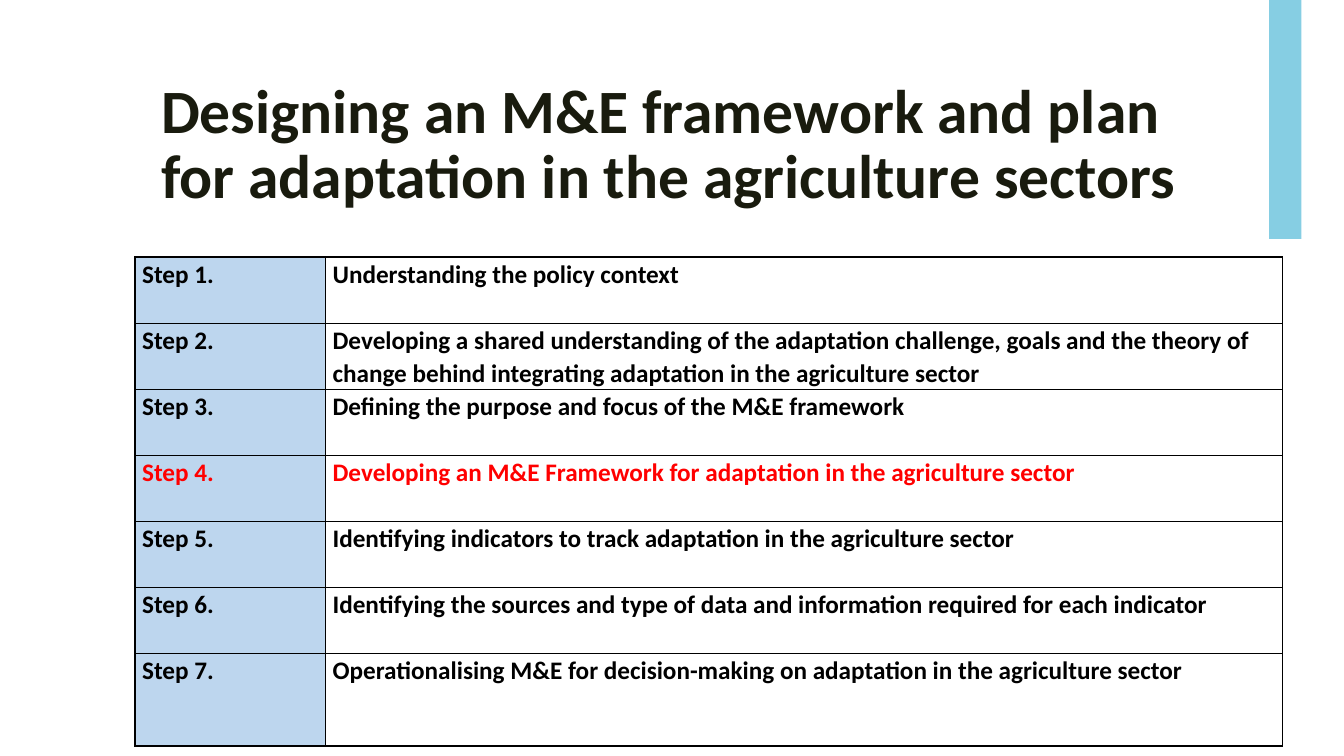
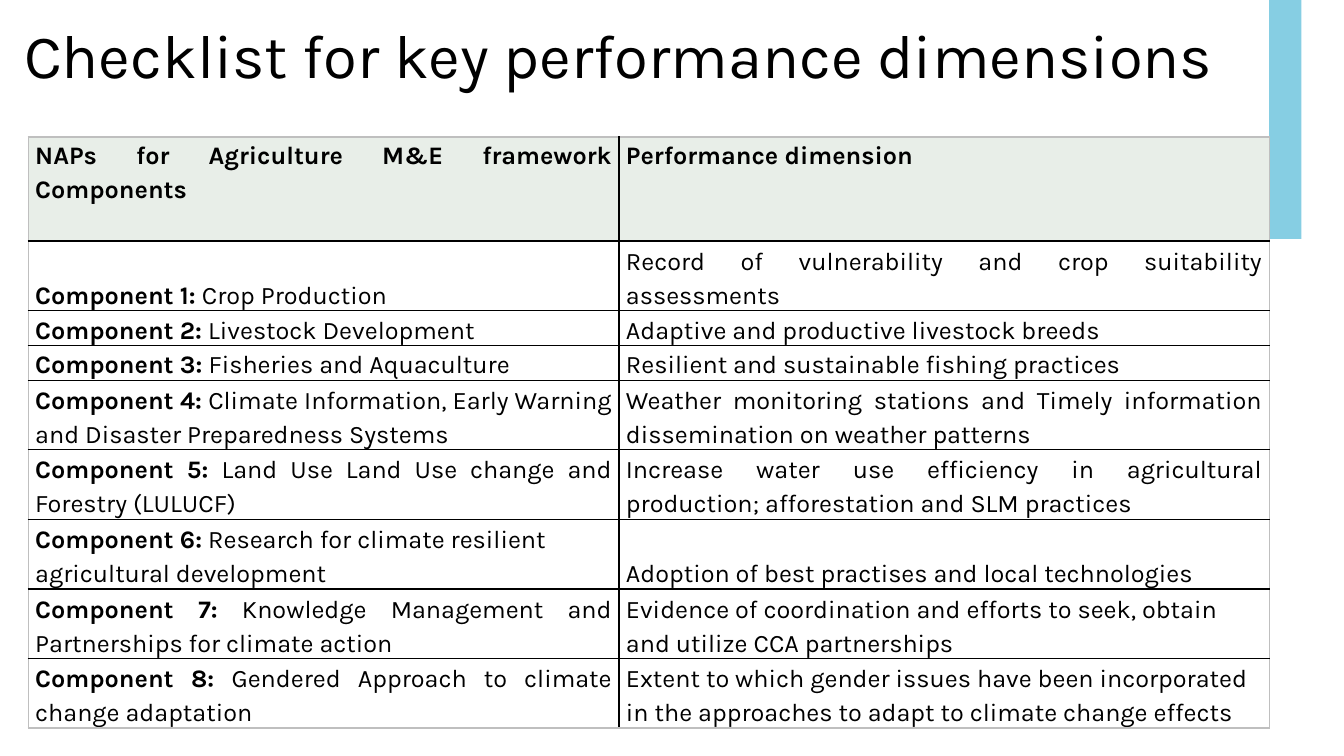
from collections import namedtuple

from lxml import etree
from pptx import Presentation
from pptx.dml.color import RGBColor
from pptx.enum.shapes import MSO_SHAPE
from pptx.enum.text import MSO_ANCHOR, PP_ALIGN
from pptx.oxml.ns import qn
from pptx.util import Inches, Pt

RECTANGLE = MSO_SHAPE.RECTANGLE
TOP, BOTTOM = MSO_ANCHOR.TOP, MSO_ANCHOR.BOTTOM
LEFT, JUSTIFY = PP_ALIGN.LEFT, PP_ALIGN.JUSTIFY

SLIDE_WIDTH, SLIDE_HEIGHT = Inches(13.33), Inches(7.5)
COLORS = {
    "band": "86CEE3",
    "title": "191B0E",
    "text": "000000",
    "highlight": "FF0000",
    "step": "BDD6EE",
    "header": "E8EEE8",
    "cell": "FFFFFF",
    "line": "000000",
    "frame": "BFBFBF",
}
TITLE_SIZE, BODY_SIZE = 44, 18
STEP_FONT, CHECKLIST_FONT = "Calibri", "Karla"

Box = namedtuple("Box", "left top width height")
BAND_BOX = Box(94.43, 0, 2.4, 31.6)

STEPS = [
    "Understanding the policy context",
    "Developing a shared understanding of the adaptation challenge, goals and "
    "the theory of change behind integrating adaptation in the agriculture sector",
    "Defining the purpose and focus of the M&E framework",
    "Developing an M&E Framework for adaptation in the agriculture sector",
    "Identifying indicators to track adaptation in the agriculture sector",
    "Identifying the sources and type of data and information required for each indicator",
    "Operationalising M&E for decision-making on adaptation in the agriculture sector",
]
CURRENT_STEP = 4

CHECKLIST_HEADERS = ["NAPs for Agriculture M&E framework Components", "Performance dimension"]
CHECKLIST = [
    ("Crop Production", JUSTIFY,
     "Record of vulnerability and crop suitability assessments", JUSTIFY),
    ("Livestock Development", JUSTIFY,
     "Adaptive and productive livestock breeds", LEFT),
    ("Fisheries and Aquaculture", JUSTIFY,
     "Resilient and sustainable fishing practices", LEFT),
    ("Climate Information, Early Warning and Disaster Preparedness Systems", JUSTIFY,
     "Weather monitoring stations and Timely information dissemination on weather patterns",
     JUSTIFY),
    ("Land Use Land Use change and Forestry (LULUCF)", JUSTIFY,
     "Increase water use efficiency in agricultural production; afforestation and SLM practices",
     JUSTIFY),
    ("Research for climate resilient agricultural development", LEFT,
     "Adoption of best practises and local technologies", JUSTIFY),
    ("Knowledge Management and Partnerships for climate action", JUSTIFY,
     "Evidence of coordination and efforts to seek, obtain and utilize CCA partnerships", LEFT),
    ("Gendered Approach to climate change adaptation", JUSTIFY,
     "Extent to which gender issues have been incorporated in the approaches "
     "to adapt to climate change effects", LEFT),
]


def color(name):
    return RGBColor.from_string(COLORS[name])


def place(box):
    return (
        round(SLIDE_WIDTH * box.left / 100),
        round(SLIDE_HEIGHT * box.top / 100),
        round(SLIDE_WIDTH * box.width / 100),
        round(SLIDE_HEIGHT * box.height / 100),
    )


def add_run(paragraph, text, font_name, size, color_name="text", bold=False):
    run = paragraph.add_run()
    run.text = text
    run.font.name = font_name
    run.font.size = Pt(size)
    run.font.bold = bold
    run.font.color.rgb = color(color_name)


def add_band(slide, box):
    shape = slide.shapes.add_shape(RECTANGLE, *place(box))
    shape.shadow.inherit = False
    shape.fill.solid()
    shape.fill.fore_color.rgb = color("band")
    shape.line.fill.background()


def add_title(slide, box, text, font_name, color_name="text", bold=False):
    frame = slide.shapes.add_textbox(*place(box)).text_frame
    frame.word_wrap = True
    frame.vertical_anchor = TOP
    paragraph = frame.paragraphs[0]
    paragraph.line_spacing = 0.89
    add_run(paragraph, text, font_name, TITLE_SIZE, color_name, bold)


def add_titled_slide(presentation, box, text, font_name, color_name="text", bold=False):
    slide = presentation.slides.add_slide(presentation.slide_layouts[6])
    add_band(slide, BAND_BOX)
    add_title(slide, box, text, font_name, color_name, bold)
    return slide


def add_grid(slide, box, column_shares, row_shares):
    left, top, width, height = place(box)
    table = slide.shapes.add_table(
        len(row_shares), len(column_shares), left, top, width, height
    ).table
    table.first_row = False
    table.horz_banding = False
    for column, share in zip(table.columns, column_shares):
        column.width = round(width * share / sum(column_shares))
    for row, share in zip(table.rows, row_shares):
        row.height = round(height * share / sum(row_shares))
    return table


def set_borders(table, frame_color):
    last_row, last_column = len(table.rows) - 1, len(table.columns) - 1
    for row in range(last_row + 1):
        for column in range(last_column + 1):
            properties = table.cell(row, column)._tc.get_or_add_tcPr()
            on_frame = {
                "a:lnL": column == 0,
                "a:lnR": column == last_column,
                "a:lnT": row == 0,
                "a:lnB": row == last_row,
            }
            for tag, outer in on_frame.items():
                line = etree.SubElement(properties, qn(tag), w=str(Pt(1)))
                fill = etree.SubElement(line, qn("a:solidFill"))
                name = frame_color if outer else "line"
                etree.SubElement(fill, qn("a:srgbClr"), val=COLORS[name])


def fill_cell(cell, runs, font_name, spacing, fill="cell", color_name="text",
              align=LEFT, anchor=TOP):
    cell.margin_left = cell.margin_right = Inches(0.07)
    cell.margin_top = cell.margin_bottom = 0
    cell.vertical_anchor = anchor
    cell.fill.solid()
    cell.fill.fore_color.rgb = color(fill)
    paragraph = cell.text_frame.paragraphs[0]
    paragraph.alignment = align
    paragraph.line_spacing = spacing
    for text, bold in runs:
        add_run(paragraph, text, font_name, BODY_SIZE, color_name, bold)


def add_steps_table(slide, box):
    table = add_grid(slide, box, [1.89, 9.49], [5] * 6 + [7])
    set_borders(table, "line")
    for number, step in enumerate(STEPS, start=1):
        color_name = "highlight" if number == CURRENT_STEP else "text"
        for column, (text, fill) in enumerate([(f"Step {number}.", "step"), (step, "cell")]):
            fill_cell(table.cell(number - 1, column), [(text, True)], STEP_FONT, 1.07,
                      fill, color_name)


def add_checklist_table(slide, box):
    table = add_grid(slide, box, [5.86, 6.45], [3.06, 2, 1, 1] + [2] * 5)
    set_borders(table, "frame")
    for column, (text, align) in enumerate(zip(CHECKLIST_HEADERS, [JUSTIFY, LEFT])):
        fill_cell(table.cell(0, column), [(text, True)], CHECKLIST_FONT, 1.15,
                  "header", align=align)
    for number, (component, component_align, dimension, dimension_align) in enumerate(
        CHECKLIST, start=1
    ):
        label_runs = [(f"Component {number}:", True), (f" {component}", False)]
        fill_cell(table.cell(number, 0), label_runs, CHECKLIST_FONT, 1.15,
                  align=component_align, anchor=BOTTOM)
        fill_cell(table.cell(number, 1), [(dimension, False)], CHECKLIST_FONT, 1.15,
                  align=dimension_align, anchor=BOTTOM)


def build_steps_slide(presentation):
    slide = add_titled_slide(
        presentation, Box(11.25, 10, 78.75, 21.6),
        "Designing an M&E framework and plan for adaptation in the agriculture sectors",
        STEP_FONT, "title", True,
    )
    add_steps_table(slide, Box(10.05, 34, 85.35, 64.7))


def build_checklist_slide(presentation):
    slide = add_titled_slide(
        presentation, Box(1.05, 2.8, 93.45, 11.6),
        "Checklist for key performance dimensions", CHECKLIST_FONT,
    )
    add_checklist_table(slide, Box(2.1, 18.13, 92.33, 76.7))


def main():
    presentation = Presentation()
    presentation.slide_width = SLIDE_WIDTH
    presentation.slide_height = SLIDE_HEIGHT
    build_steps_slide(presentation)
    build_checklist_slide(presentation)
    presentation.save("out.pptx")


if __name__ == "__main__":
    main()
